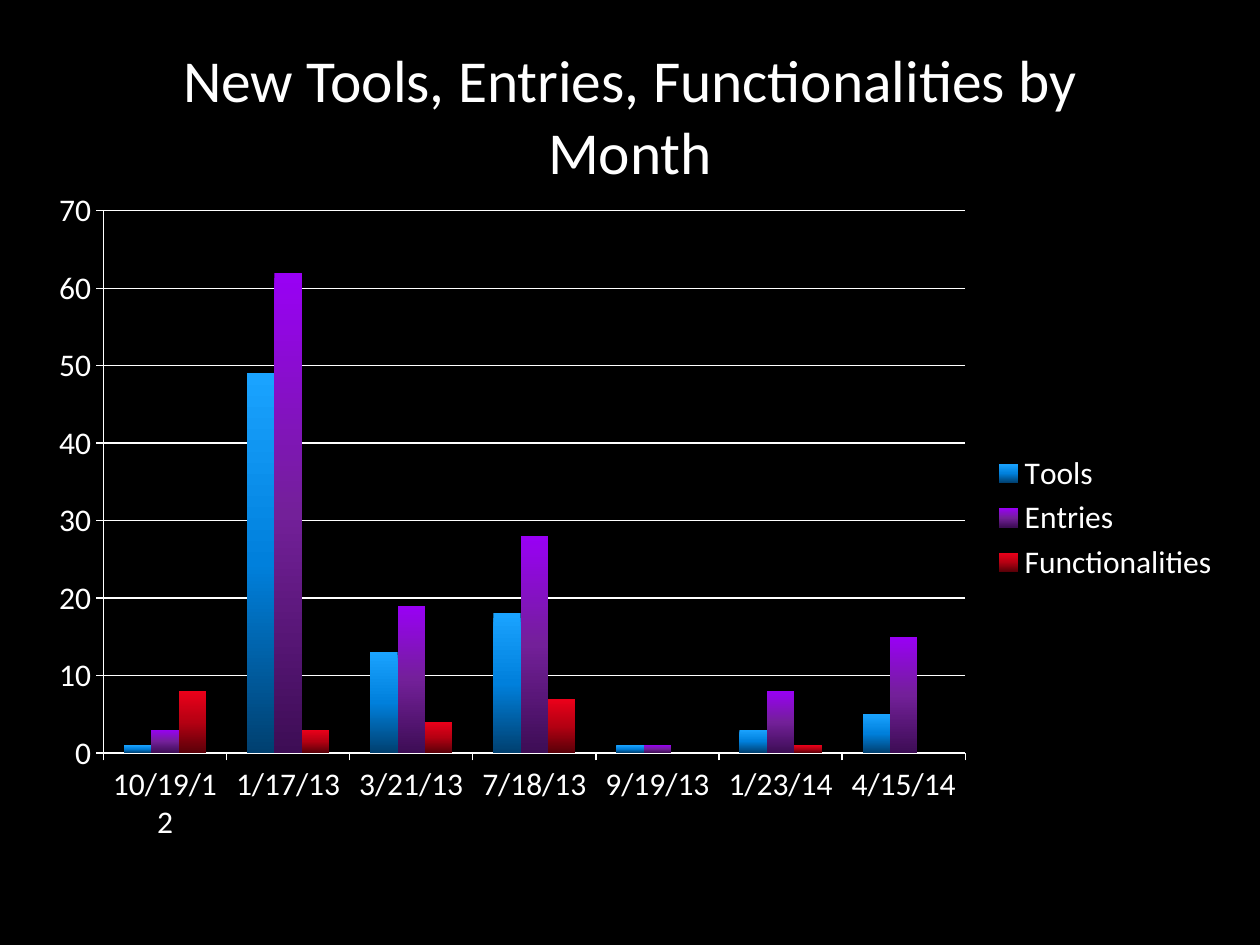
from copy import deepcopy
from typing import NamedTuple

from lxml import etree
from pptx import Presentation
from pptx.chart import data
from pptx.dml.color import RGBColor
from pptx.enum import chart as kinds, text
from pptx.oxml import ns
from pptx.util import Inches, Pt

FONT = "Calibri"
COLORS = {
    "back": "000000", "ink": "FFFFFF",
    "blue top": "1AA3FF", "blue mid": "0080DC", "blue low": "004070",
    "purple top": "9900F5", "purple mid": "732099", "purple low": "3D0D55",
    "red top": "EC001A", "red mid": "B50012", "red low": "5A0008",
}
DATES = ["10/19/12", "1/17/13", "3/21/13", "7/18/13", "9/19/13", "1/23/14", "4/15/14"]
PLOT = {"x": 0.057, "y": 0.047, "w": 0.72, "h": 0.8}


class Series(NamedTuple):
    name: str
    hue: str
    counts: tuple[int, ...]


SERIES = [
    Series("Tools", "blue", (1, 49, 13, 18, 1, 3, 5)),
    Series("Entries", "purple", (3, 62, 19, 28, 1, 8, 15)),
    Series("Functionalities", "red", (8, 3, 4, 7, 0, 1, 0)),
]


def color(key: str) -> RGBColor:
    return RGBColor.from_string(COLORS[key])


def add_title(slide, words: str) -> None:
    title = slide.shapes.title
    title.left, title.top = Inches(0.75), Inches(0.13)
    title.width, title.height = Inches(8.5), Inches(1.56)
    frame = title.text_frame
    frame.word_wrap = True
    frame.vertical_anchor = text.MSO_ANCHOR.MIDDLE
    line = frame.paragraphs[0]
    line.alignment = text.PP_ALIGN.CENTER
    run = line.add_run()
    run.text = words
    run.font.name, run.font.size = FONT, Pt(34)
    run.font.color.rgb = color("ink")


def shade(bar, hue: str) -> None:
    """Fill the bars from top to bottom with three tones of a hue."""
    fill = bar.format.fill
    fill.gradient()
    fill.gradient_angle = 270
    stops = next(bar._element.iter(ns.qn("a:gsLst")))
    stops.insert(1, deepcopy(stops[0]))
    for stop, tone, place in zip(fill.gradient_stops, ("top", "mid", "low"), (0, 0.5, 1)):
        stop.color.rgb = color(f"{hue} {tone}")
        stop.position = place


def style_axis(axis) -> None:
    axis.major_tick_mark = kinds.XL_TICK_MARK.OUTSIDE
    axis.minor_tick_mark = kinds.XL_TICK_MARK.NONE
    draw_line(axis.format.line)


def draw_line(line) -> None:
    line.color.rgb = color("ink")
    line.width = Pt(0.75)


def place_plot(chart) -> None:
    """Fix the inner plot area as fractions of the chart."""
    area = chart._chartSpace.chart.plotArea
    for old in area.findall(ns.qn("c:layout")):
        area.remove(old)
    layout = etree.Element(ns.qn("c:layout"))
    manual = etree.SubElement(layout, ns.qn("c:manualLayout"))
    rules = {"layoutTarget": "inner", "xMode": "edge", "yMode": "edge", **PLOT}
    for tag, value in rules.items():
        etree.SubElement(manual, ns.qn(f"c:{tag}")).set("val", str(value))
    area.insert(0, layout)


def add_bars(slide) -> None:
    table = data.CategoryChartData()
    table.categories = DATES
    for item in SERIES:
        table.add_series(item.name, item.counts)
    chart = slide.shapes.add_chart(
        kinds.XL_CHART_TYPE.COLUMN_CLUSTERED,
        Inches(0.28), Inches(1.42), Inches(9.5), Inches(5.38), table,
    ).chart
    chart.has_title = False
    chart.font.name, chart.font.size = FONT, Pt(18)
    chart.font.color.rgb = color("ink")
    chart.has_legend = True
    chart.legend.position = kinds.XL_LEGEND_POSITION.RIGHT
    chart.legend.include_in_layout = False

    plot = chart.plots[0]
    plot.gap_width, plot.overlap, plot.vary_by_categories = 150, 0, False
    for bar, item in zip(plot.series, SERIES):
        shade(bar, item.hue)

    scale = chart.value_axis
    scale.minimum_scale, scale.maximum_scale, scale.major_unit = 0, 70, 10
    scale.has_major_gridlines = True
    draw_line(scale.major_gridlines.format.line)
    for axis in (chart.category_axis, scale):
        style_axis(axis)
    place_plot(chart)


def main() -> None:
    deck = Presentation()
    deck.slide_width, deck.slide_height = Inches(10), Inches(7.5)
    slide = deck.slides.add_slide(deck.slide_layouts[5])
    back = slide.background.fill
    back.solid()
    back.fore_color.rgb = color("back")
    add_title(slide, "New Tools, Entries, Functionalities by Month")
    add_bars(slide)
    deck.save("out.pptx")


if __name__ == "__main__":
    main()
